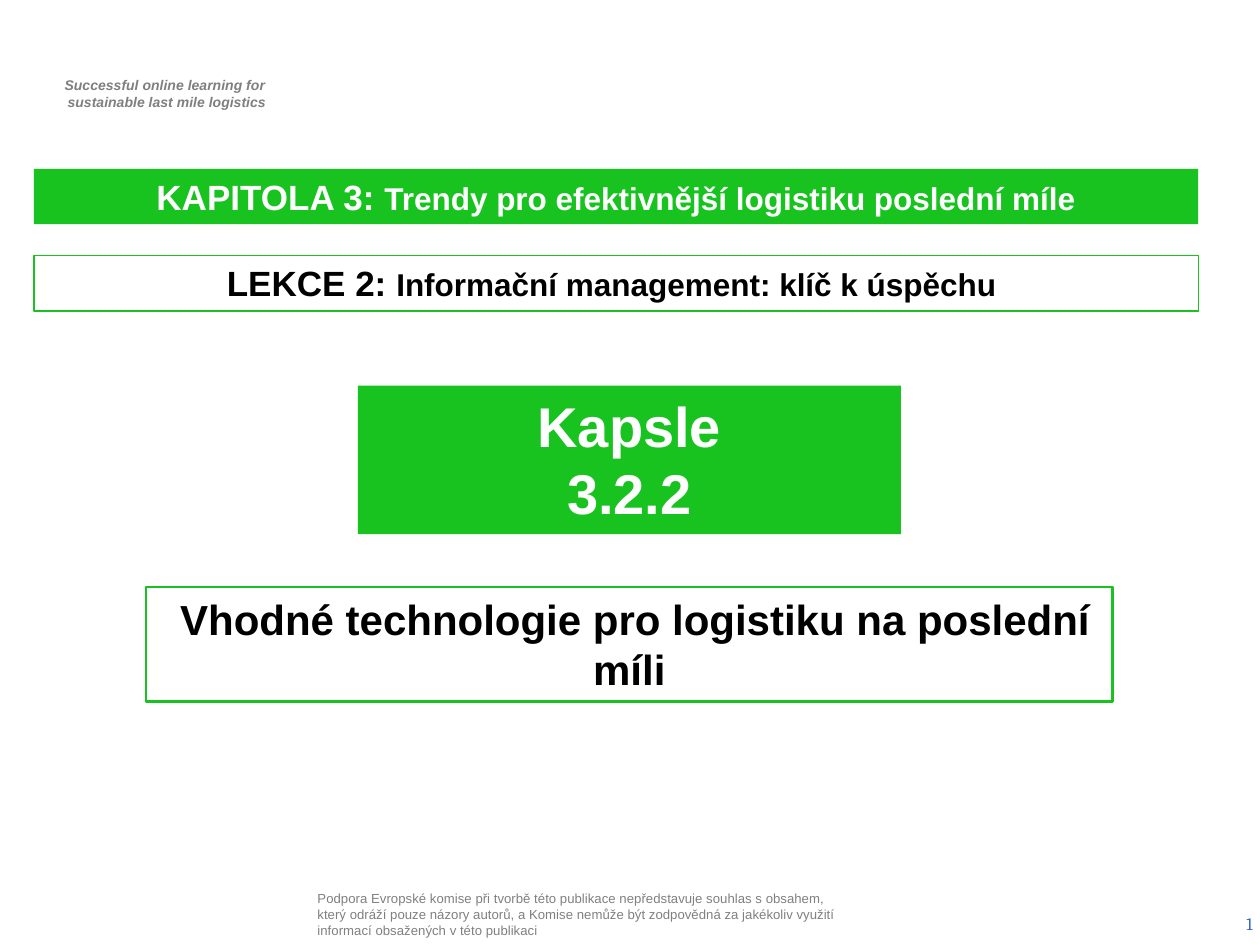
from pptx import Presentation
from pptx.dml.color import RGBColor
from pptx.enum.shapes import MSO_SHAPE
from pptx.enum.text import MSO_ANCHOR, MSO_AUTO_SIZE, PP_ALIGN
from pptx.util import Inches, Pt

GREEN = RGBColor(0x18, 0xC3, 0x20)
WHITE = RGBColor(0xFF, 0xFF, 0xFF)
BLACK = RGBColor(0x00, 0x00, 0x00)
DARK_GREY = RGBColor(0x7F, 0x7F, 0x7F)
GREY = RGBColor(0x80, 0x80, 0x80)
BLUE = RGBColor(0x33, 0x66, 0xCC)

COLUMNS, ROWS = 100, 75
TITLE_ONLY = 5


class CapsuleSlide:
    """Style and slide; places are (column, row, columns wide, rows high)."""

    font_name = "Arial"

    def __init__(self, presentation):
        self.column = presentation.slide_width / COLUMNS
        self.row = presentation.slide_height / ROWS
        self.slide = presentation.slides.add_slide(presentation.slide_layouts[TITLE_ONLY])

    def lengths(self, place):
        left, top, width, height = place
        return [round(n) for n in (left * self.column, top * self.row,
                                   width * self.column, height * self.row)]

    def set_text(self, shape, lines, color, align, bold=True, italic=False,
                 font_name=font_name, inset=(0.1, 0.05), anchor=MSO_ANCHOR.TOP):
        """Fill a shape with lines, each a list of (text, size) runs."""
        frame = shape.text_frame
        frame.word_wrap = True
        frame.auto_size = MSO_AUTO_SIZE.NONE
        frame.vertical_anchor = anchor
        frame.margin_left = frame.margin_right = Inches(inset[0])
        frame.margin_top = frame.margin_bottom = Inches(inset[1])
        for index, runs in enumerate(lines):
            paragraph = frame.add_paragraph() if index else frame.paragraphs[0]
            paragraph.alignment = align
            font = paragraph.font
            font.name, font.bold, font.italic = font_name, bold, italic
            font.color.rgb = color
            font.size = Pt(runs[0][1])
            for text, size in runs:
                run = paragraph.add_run()
                run.text = text
                if size != runs[0][1]:
                    run.font.size = Pt(size)
        return frame

    def text(self, place, lines, color, align=PP_ALIGN.LEFT, **style):
        box = self.slide.shapes.add_textbox(*self.lengths(place))
        return self.set_text(box, lines, color, align, **style)

    def filled_banner(self, place, *lines):
        banner = self.rectangle(place)
        banner.fill.solid()
        banner.fill.fore_color.rgb = GREEN
        banner.line.fill.background()
        self.set_text(banner, lines, WHITE, PP_ALIGN.CENTER)

    def framed_banner(self, place, line_width, *lines):
        self.frame(self.rectangle(place), line_width, lines)

    def title(self, place, line_width, *lines):
        heading = self.slide.shapes.title
        heading.left, heading.top, heading.width, heading.height = self.lengths(place)
        self.frame(heading, line_width, lines)

    def rectangle(self, place):
        rectangle = self.slide.shapes.add_shape(MSO_SHAPE.RECTANGLE, *self.lengths(place))
        rectangle.shadow.inherit = False
        return rectangle

    def frame(self, shape, line_width, lines):
        shape.fill.background()
        shape.line.color.rgb = GREEN
        shape.line.width = Pt(line_width)
        self.set_text(shape, lines, BLACK, PP_ALIGN.CENTER)


def main():
    presentation = Presentation()
    presentation.slide_width, presentation.slide_height = Inches(10), Inches(7.5)
    capsule = CapsuleSlide(presentation)

    tagline = capsule.text(
        (2.9, 5.6, 20.3, 3.7),
        [[("Successful online learning for ", 8)], [("sustainable last mile logistics", 8)]],
        DARK_GREY, PP_ALIGN.CENTER, italic=True)
    for paragraph in tagline.paragraphs:
        paragraph._p.get_or_add_pPr().set("marL", str(Inches(0.04)))

    capsule.text(
        (24.8, 70.3, 42.7, 5),
        [[("Podpora Evropské komise při tvorbě této publikace nepředstavuje souhlas "
           "s obsahem, který odráží pouze názory autorů, a Komise nemůže být zodpovědná "
           "za jakékoliv využití informací obsažených v této publikaci", 7.5)]],
        GREY, bold=False, inset=(0.04, 0.04))
    capsule.text((77.1, 71.3, 23.3, 4), [[("1", 10)]], BLUE, PP_ALIGN.RIGHT,
                 bold=False, font_name="Cambria", anchor=MSO_ANCHOR.MIDDLE)

    capsule.filled_banner((2.7, 13.4, 92.4, 4.4), [
        ("KAPITOLA 3: ", 20), ("Trendy pro efektivnější logistiku poslední míle", 18)])
    capsule.framed_banner((2.7, 20.3, 92.4, 4.4), 0.75, [
        ("LEKCE 2: ", 20), ("Informační management: klíč k úspěchu ", 18)])
    capsule.filled_banner((28.4, 30.6, 43.1, 11.8), [("Kapsle", 32)], [("3.2.2", 32)])
    capsule.title((11.6, 46.6, 76.7, 9.1), 1.5, [
        (" Vhodné technologie pro logistiku na poslední míli", 24)])

    presentation.save("out.pptx")


if __name__ == "__main__":
    main()
